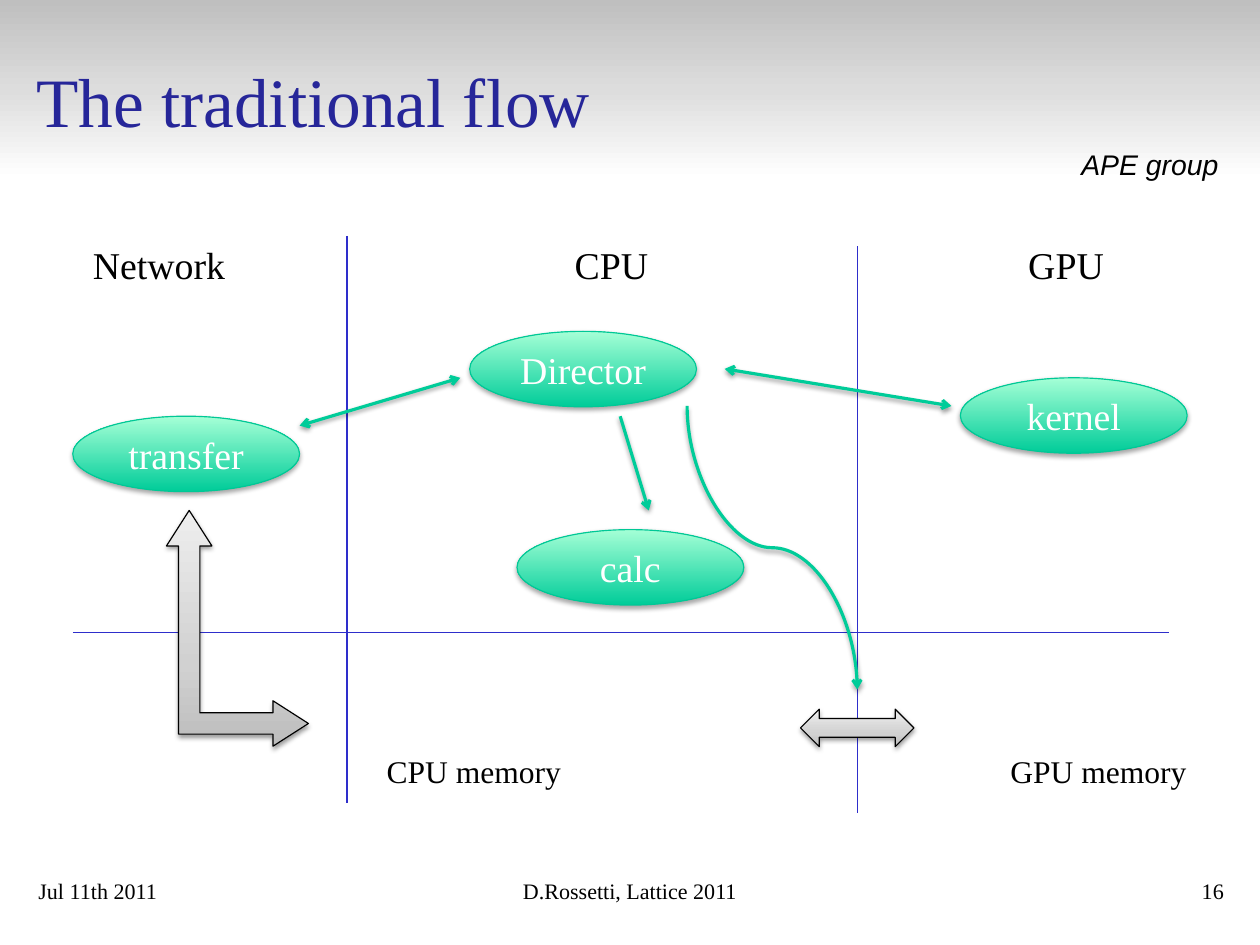
"""Build the slide on the traditional flow between network, CPU and GPU."""
import pptx
import pptx.dml.color
import pptx.enum.shapes
import pptx.enum.text
import pptx.oxml.ns
import pptx.util
from lxml import etree

Cm = pptx.util.Cm
Pt = pptx.util.Pt
RGBColor = pptx.dml.color.RGBColor
MSO_SHAPE = pptx.enum.shapes.MSO_SHAPE
MSO_CONNECTOR = pptx.enum.shapes.MSO_CONNECTOR
MSO_ANCHOR = pptx.enum.text.MSO_ANCHOR
PP_ALIGN = pptx.enum.text.PP_ALIGN
qn = pptx.oxml.ns.qn

BLACK = RGBColor(0x00, 0x00, 0x00)
WHITE = RGBColor(0xFF, 0xFF, 0xFF)
TITLE_BLUE = RGBColor(0x26, 0x26, 0x99)
DIVIDER_BLUE = RGBColor(0x2E, 0x2E, 0xCB)
GREEN = RGBColor(0x00, 0xCC, 0x99)
OUTLINE_GREEN = RGBColor(0x00, 0xC8, 0x96)
LIGHT_GREEN = RGBColor(0xA5, 0xFF, 0xD6)
DARK_GRAY = RGBColor(0xBD, 0xBD, 0xBD)
MIDDLE_GRAY = RGBColor(0xD1, 0xD1, 0xD1)
LIGHT_GRAY = RGBColor(0xEE, 0xEE, 0xEE)
BANNER_DARK = RGBColor(0xBF, 0xBF, 0xBF)
BANNER_MIDDLE = RGBColor(0xDD, 0xDD, 0xDD)

BANNER_STOPS = [(0, BANNER_DARK), (50, BANNER_MIDDLE), (100, WHITE)]
TASK_STOPS = [(0, GREEN), (100, LIGHT_GREEN)]
BLOCK_STOPS = [(0, DARK_GRAY), (35, MIDDLE_GRAY), (100, LIGHT_GRAY)]


def format_text(shape, text, size, color, align=PP_ALIGN.LEFT, font="Times New Roman"):
    """Write one line of text and return its font."""
    shape.text_frame.text = text
    paragraph = shape.text_frame.paragraphs[0]
    paragraph.alignment = align
    run_font = paragraph.runs[0].font
    run_font.name = font
    run_font.size = Pt(size)
    run_font.color.rgb = color
    return run_font


def add_text(slide, box, text, size, color=BLACK, wrap=True, anchor=MSO_ANCHOR.TOP, **style):
    """Add a text box and return the font of its text."""
    shape = slide.shapes.add_textbox(*map(Cm, box))
    shape.text_frame.word_wrap = wrap
    shape.text_frame.vertical_anchor = anchor
    return format_text(shape, text, size, color, **style)


def add_shadow(effects, opacity):
    """Put a soft shadow below a shape into its effect list."""
    shadow = etree.SubElement(
        effects, qn("a:outerShdw"), blurRad=str(Pt(3.1)), dist=str(Pt(1.7)),
        dir="5400000", rotWithShape="0")
    color = etree.SubElement(shadow, qn("a:srgbClr"), val=str(BLACK))
    etree.SubElement(color, qn("a:alpha"), val=str(opacity * 1000))


def add_gradient_shape(slide, kind, box, stops, angle=90, outline=None, opacity=0):
    """Add a preset shape with a gradient fill, and an outline and shadow if given."""
    shape = slide.shapes.add_shape(kind, *map(Cm, box))
    shape.shadow.inherit = False
    shape.fill.gradient()
    shape.fill.gradient_angle = angle
    stop_list = shape.element.spPr.find(".//" + qn("a:gsLst"))
    stop_list.clear()
    for position, color in stops:
        stop = etree.SubElement(stop_list, qn("a:gs"), pos=str(position * 1000))
        etree.SubElement(stop, qn("a:srgbClr"), val=str(color))
    if outline is None:
        shape.line.fill.background()
    else:
        shape.line.color.rgb = outline
        shape.line.width = Pt(0.75)
    if opacity:
        add_shadow(shape.element.spPr.find(qn("a:effectLst")), opacity)
    return shape


def add_task(slide, left, top, text):
    """Add a green ellipse that names a task."""
    shape = add_gradient_shape(slide, MSO_SHAPE.OVAL, (left, top, 5.08, 1.69),
                               TASK_STOPS, outline=OUTLINE_GREEN, opacity=35)
    shape.text_frame.vertical_anchor = MSO_ANCHOR.MIDDLE
    format_text(shape, text, 24, WHITE, PP_ALIGN.CENTER)


def add_block_arrow(slide, kind, box):
    """Add a gray block arrow."""
    return add_gradient_shape(slide, kind, box, BLOCK_STOPS, outline=BLACK, opacity=38)


def add_line(slide, ends, color, width, kind=MSO_CONNECTOR.STRAIGHT):
    """Add a connector and return it with its empty effect list."""
    connector = slide.shapes.add_connector(kind, *map(Cm, ends))
    connector.line.color.rgb = color
    connector.line.width = Pt(width)
    effects = etree.SubElement(connector.element.spPr, qn("a:effectLst"))
    return connector, effects


def add_flow(slide, ends, heads=("a:tailEnd",), kind=MSO_CONNECTOR.STRAIGHT):
    """Add a green connector with arrowheads and a shadow."""
    connector, effects = add_line(slide, ends, GREEN, 2, kind)
    for head in heads:
        etree.SubElement(connector.element.spPr.find(qn("a:ln")), qn(head), type="arrow")
    add_shadow(effects, 38)
    return connector


def main():
    """Build and save the presentation."""
    presentation = pptx.Presentation()
    presentation.slide_width = Cm(28.22)
    presentation.slide_height = Cm(21.16)
    slide = presentation.slides.add_slide(presentation.slide_layouts[6])

    add_gradient_shape(slide, MSO_SHAPE.RECTANGLE, (0, 0, 28.22, 4.01), BANNER_STOPS, angle=270)
    group_font = add_text(slide, (23.85, 3.18, 3.81, 0.97), "APE group", 18,
                          align=PP_ALIGN.CENTER, font="Arial")
    group_font.italic = True
    add_text(slide, (0.56, 0.48, 23.06, 3.53), "The traditional flow", 44, TITLE_BLUE,
             anchor=MSO_ANCHOR.MIDDLE)

    for left, width, text, align in (
            (0.61, 5.89, "Jul 11th 2011", PP_ALIGN.LEFT),
            (7.34, 13.54, "D.Rossetti, Lattice 2011", PP_ALIGN.CENTER),
            (21.77, 5.89, "16", PP_ALIGN.RIGHT)):
        add_text(slide, (left, 19.53, width, 1.42), text, 14, align=align)

    for left, width, text in ((1.83, 3.53, "Network"), (12.62, 2.18, "CPU"), (22.78, 2.24, "GPU")):
        add_text(slide, (left, 5.28, width, 1.27), text, 24, wrap=False)
    for left, text in ((8.41, "CPU memory"), (22.38, "GPU memory")):
        add_text(slide, (left, 16.71, 4.47, 1.12), text, 20, wrap=False)

    for ends in ((1.63, 14.17, 26.19, 14.17), (7.77, 5.28, 7.77, 17.98), (19.2, 5.51, 19.2, 18.21)):
        add_line(slide, ends, DIVIDER_BLUE, 0.75)

    for left, top, text in ((10.52, 7.42, "Director"), (21.51, 8.46, "kernel"),
                            (11.58, 11.86, "calc"), (1.63, 9.32, "transfer")):
        add_task(slide, left, top, text)

    add_block_arrow(slide, MSO_SHAPE.LEFT_RIGHT_ARROW, (17.93, 15.88, 2.54, 0.84))
    network_arrow = add_block_arrow(slide, MSO_SHAPE.LEFT_UP_ARROW, (3.73, 11.43, 3.18, 5.28))
    network_arrow.element.spPr.xfrm.set("flipH", "1")
    for index, value in enumerate((0.15, 0.16, 0.25)):
        network_arrow.adjustments[index] = value

    both_heads = ("a:headEnd", "a:tailEnd")
    add_flow(slide, (13.89, 9.32, 14.53, 11.43))
    add_flow(slide, (16.23, 8.26, 21.31, 9.09), both_heads)
    add_flow(slide, (10.31, 8.46, 6.71, 9.53), both_heads)
    memory_flow = add_flow(slide, (14.12, 10.36, 20.47, 14.17), kind=MSO_CONNECTOR.CURVE)
    memory_flow.element.spPr.xfrm.set("rot", "16200000")
    memory_flow.element.spPr.xfrm.set("flipH", "1")

    presentation.save("out.pptx")


if __name__ == "__main__":
    main()
